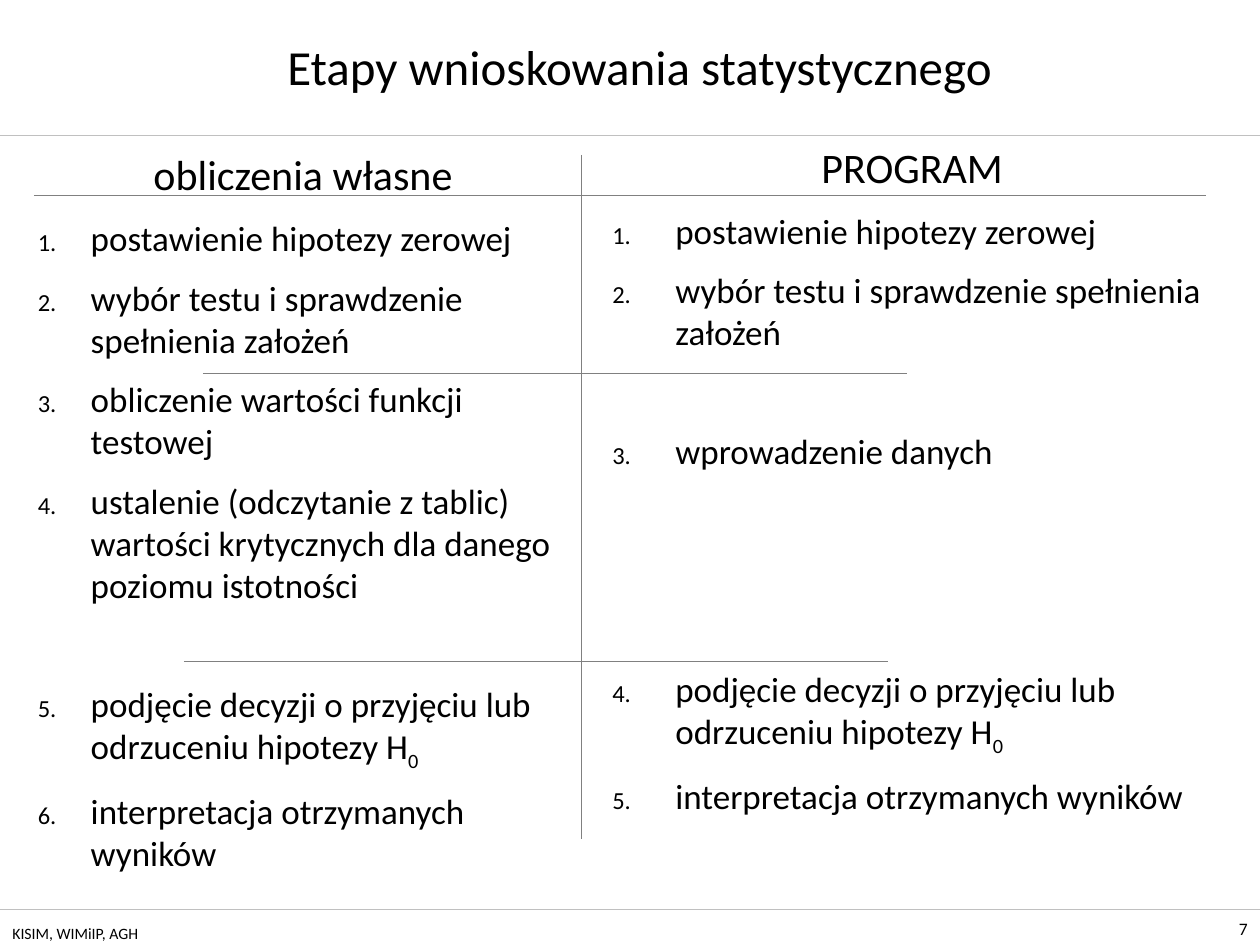
from lxml.etree import SubElement as Sub
from pptx import Presentation
from pptx.dml.color import RGBColor
from pptx.enum.shapes import MSO_CONNECTOR as Conn
from pptx.enum.text import MSO_ANCHOR as Anchor, MSO_AUTO_SIZE as Auto, PP_ALIGN as Align
from pptx.oxml.ns import qn
from pptx.util import Inches, Pt

BLACK = RGBColor(0x00, 0x00, 0x00)
GREY = RGBColor(0x80, 0x80, 0x80)
SILVER = RGBColor(0xC0, 0xC0, 0xC0)
GAP = 10   # points between list items
ROW = 34   # points of one skipped list row


def place(box, area, anchor):
    box.left, box.top, box.width, box.height = map(Inches, area)
    form = {"word_wrap": True, "auto_size": Auto.NONE, "vertical_anchor": anchor,
            "margin_left": Inches(0.1), "margin_right": Inches(0.1),
            "margin_top": Inches(0.05), "margin_bottom": Inches(0.05)}
    for key, val in form.items():
        setattr(box.text_frame, key, val)
    return box.text_frame


def style(para, text, size, align):
    # A "_" in the text starts a subscript
    base, _, low = text.partition("_")
    para.add_run().text = base
    if low:
        sub = para.add_run()
        sub.text = low
        sub._r.get_or_add_rPr().set("baseline", "-25000")
    para.alignment = align
    for run in para.runs:
        form = {"name": "Calibri", "size": Pt(size), "bold": False}
        for key, val in form.items():
            setattr(run.font, key, val)
        run.font.color.rgb = BLACK


prs = Presentation()
prs.slide_width, prs.slide_height = Inches(10), Inches(7.5)
slide = prs.slides.add_slide(prs.slide_layouts[3])
title, left, right = slide.placeholders

# Title
frame = place(title, (0.98, 0.21, 8.19, 0.63), Anchor.MIDDLE)
style(frame.paragraphs[0], "Etapy wnioskowania statystycznego", 28, Align.CENTER)

# Two numbered lists: each item has its text and the rows skipped above it
START = [("postawienie hipotezy zerowej", 0),
         ("wybór testu i sprawdzenie spełnienia założeń", 0)]
CHOICE = "podjęcie decyzji o przyjęciu lub odrzuceniu hipotezy H_0"
END = ("interpretacja otrzymanych wyników", 0)
own = START + [
    ("obliczenie wartości funkcji testowej", 0),
    ("ustalenie (odczytanie z tablic) wartości krytycznych dla danego poziomu istotności", 0),
    (CHOICE, 1), END]
tool = START + [("wprowadzenie danych", 1), (CHOICE, 3), END]

lists = [
    (left, (0.2, 1.07, 4.41, 5.98), 0.11, 0.42, "obliczenia własne", own),
    (right, (4.76, 1.07, 4.96, 5.98), 0.05, 0.5, "PROGRAM", tool),
]
for box, area, top, dent, head, items in lists:
    frame = place(box, area, Anchor.TOP)
    frame.margin_top = Inches(top)
    para = frame.paragraphs[0]
    props = para._p.get_or_add_pPr()
    props.set("marL", "0")
    props.set("indent", "0")
    Sub(props, qn("a:buNone"))
    style(para, head, 24, Align.CENTER)
    para.space_before = Pt(0)
    for text, skip in items:
        para = frame.add_paragraph()
        props = para._p.get_or_add_pPr()
        props.set("marL", str(Inches(dent)))
        props.set("indent", str(-Inches(dent)))
        Sub(props, qn("a:buSzPct"), val="70000")
        Sub(props, qn("a:buFont"), typeface="Calibri")
        Sub(props, qn("a:buAutoNum"), type="arabicPeriod")
        style(para, text, 20, Align.LEFT)
        para.space_before = Pt(GAP + ROW * skip)

# Footer and page number
for text, area, size, align, anchor in [
    ("KISIM, WIMiIP, AGH", (0, 7.28, 3.17, 0.22), 9, Align.LEFT, Anchor.TOP),
    ("7", (9.49, 7.22, 0.51, 0.28), 10, Align.RIGHT, Anchor.BOTTOM),
]:
    frame = place(slide.shapes.add_textbox(0, 0, 0, 0), area, anchor)
    style(frame.paragraphs[0], text, size, align)

# Page rules, then the lines that split the lists
for ends, color in [
    ((0, 1.07, 10, 1.07), SILVER),
    ((0, 7.22, 10, 7.22), SILVER),
    ((0.27, 1.55, 9.57, 1.55), GREY),
    ((4.61, 1.23, 4.61, 6.66), GREY),
    ((1.61, 2.96, 7.2, 2.96), GREY),
    ((1.46, 5.25, 7.05, 5.25), GREY),
]:
    rule = slide.shapes.add_connector(Conn.STRAIGHT, *map(Inches, ends))
    rule.line.color.rgb = color
    rule.line.width = Pt(0.25)
    Sub(rule._element.spPr, qn("a:effectLst"))

prs.save("out.pptx")
